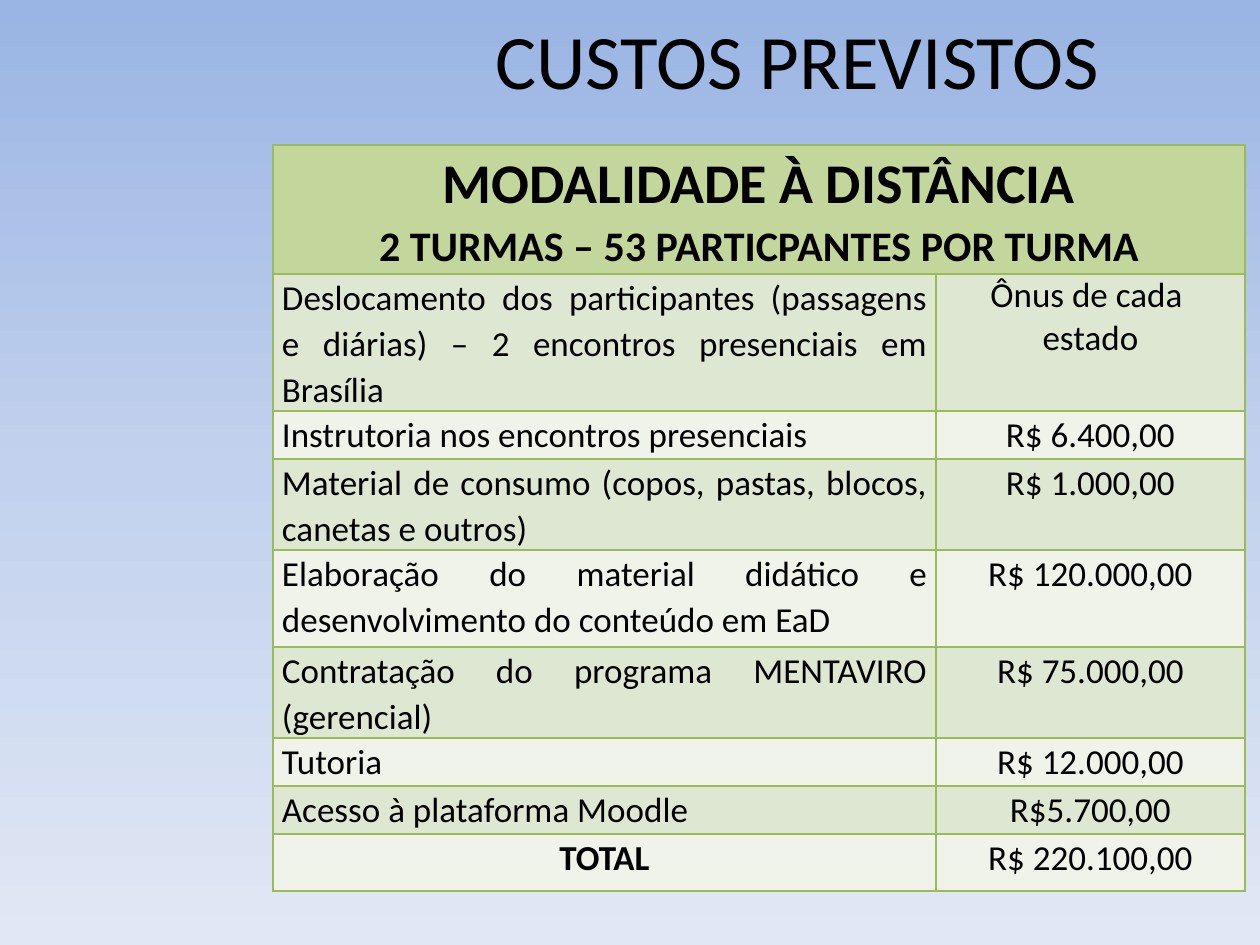
from dataclasses import dataclass
import copy

import pptx
import pptx.dml.color
import pptx.enum.text
import pptx.oxml
import pptx.oxml.ns
import pptx.util

SCALE = 914400 / 126  # EMU per px
FONT = "Calibri"
HUES = {
    "text": "000000", "head": "C3D69B", "odd": "DEE7D1", "even": "EFF3EA",
    "line": "9BBB59", "top": "9AB5E4", "mid": "C2D1ED", "low": "E1E8F5",
}
ALIGN = pptx.enum.text.PP_ALIGN
ANCHOR = pptx.enum.text.MSO_ANCHOR


@dataclass
class Line:
    text: str
    size: int = 20
    bold: bool = False
    align: ALIGN = ALIGN.CENTER
    space: float | None = 1.07


@dataclass
class Row:
    high: int
    item: Line
    cost: list[Line]


def px(n: int) -> int:
    return round(n * SCALE)


def hue(name: str) -> pptx.dml.color.RGBColor:
    return pptx.dml.color.RGBColor.from_string(HUES[name])


def item(text: str) -> Line:
    return Line(text, align=ALIGN.JUSTIFY)


def write(frame, lines: list[Line]) -> None:
    for i, line in enumerate(lines):
        para = frame.add_paragraph() if i else frame.paragraphs[0]
        para.text = line.text
        para.alignment = line.align
        if line.space:
            para.line_spacing = line.space
        font = para.font
        font.name, font.size, font.bold = FONT, pptx.util.Pt(line.size), line.bold
        font.color.rgb = hue("text")


def edge(cell) -> None:
    props = cell._tc.get_or_add_tcPr()
    space = pptx.oxml.ns.nsdecls("a")
    for i, side in enumerate(("lnL", "lnR", "lnT", "lnB")):
        props.insert(i, pptx.oxml.parse_xml(
            f'<a:{side} {space} w="12700"><a:solidFill>'
            f'<a:srgbClr val="{HUES["line"]}"/></a:solidFill></a:{side}>'))


def fill(cell, name: str, lines: list[Line]) -> None:
    cell.margin_left = cell.margin_right = px(9)
    cell.margin_top = cell.margin_bottom = 0
    cell.fill.solid()
    cell.fill.fore_color.rgb = hue(name)
    write(cell.text_frame, lines)


def shade(slide) -> None:
    back = slide.background.fill
    back.gradient()
    back.gradient_angle = 270
    stops = slide.element.find(".//" + pptx.oxml.ns.qn("a:gsLst"))
    stops.append(copy.deepcopy(stops[-1]))
    for stop, name, spot in zip(back.gradient_stops, ("top", "mid", "low"), (0, 0.5, 1)):
        stop.color.rgb = hue(name)
        stop.position = spot


HEAD = [Line("MODALIDADE À DISTÂNCIA", 32, True),
        Line("2 TURMAS – 53 PARTICPANTES POR TURMA", 24, True)]
TOP = 129  # height of the heading row
WIDE = (663, 309)
ROWS = [
    Row(137, item("Deslocamento dos participantes (passagens e diárias) – "
                  "2 encontros presenciais em Brasília"),
        [Line("Ônus de cada ", space=None), Line("estado", space=None)]),
    Row(48, item("Instrutoria nos encontros presenciais"), [Line("R$ 6.400,00")]),
    Row(91, item("Material de consumo (copos, pastas, blocos, canetas e outros)"),
        [Line("R$ 1.000,00")]),
    Row(97, item("Elaboração do material didático e desenvolvimento do conteúdo em EaD"),
        [Line("R$ 120.000,00")]),
    Row(91, item("Contratação do programa MENTAVIRO (gerencial)"),
        [Line("R$ 75.000,00")]),
    Row(48, item("Tutoria "), [Line("R$ 12.000,00")]),
    Row(48, item("Acesso à plataforma Moodle "), [Line("R$5.700,00")]),
    Row(57, Line("TOTAL", bold=True), [Line("R$ 220.100,00")]),
]


def main() -> None:
    deck = pptx.Presentation()
    deck.slide_width, deck.slide_height = px(1260), px(945)
    slide = deck.slides.add_slide(deck.slide_layouts[6])
    shade(slide)

    # Title
    box = slide.shapes.add_textbox(px(351), px(5), px(893), px(107))
    frame = box.text_frame
    frame.word_wrap = True
    frame.vertical_anchor = ANCHOR.MIDDLE
    write(frame, [Line("CUSTOS PREVISTOS", 44, space=None)])

    # Cost table
    highs = [TOP] + [row.high for row in ROWS]
    table = slide.shapes.add_table(len(highs), len(WIDE), px(273), px(145),
                                   px(sum(WIDE)), px(sum(highs))).table
    for col, wide in zip(table.columns, WIDE):
        col.width = px(wide)
    for row, high in zip(table.rows, highs):
        row.height = px(high)
    table.cell(0, 0).merge(table.cell(0, 1))
    fill(table.cell(0, 0), "head", HEAD)
    for i, row in enumerate(ROWS, 1):
        name = "odd" if i % 2 else "even"
        fill(table.cell(i, 0), name, [row.item])
        fill(table.cell(i, 1), name, row.cost)
    for cell in table.iter_cells():
        edge(cell)

    deck.save("out.pptx")


if __name__ == "__main__":
    main()
